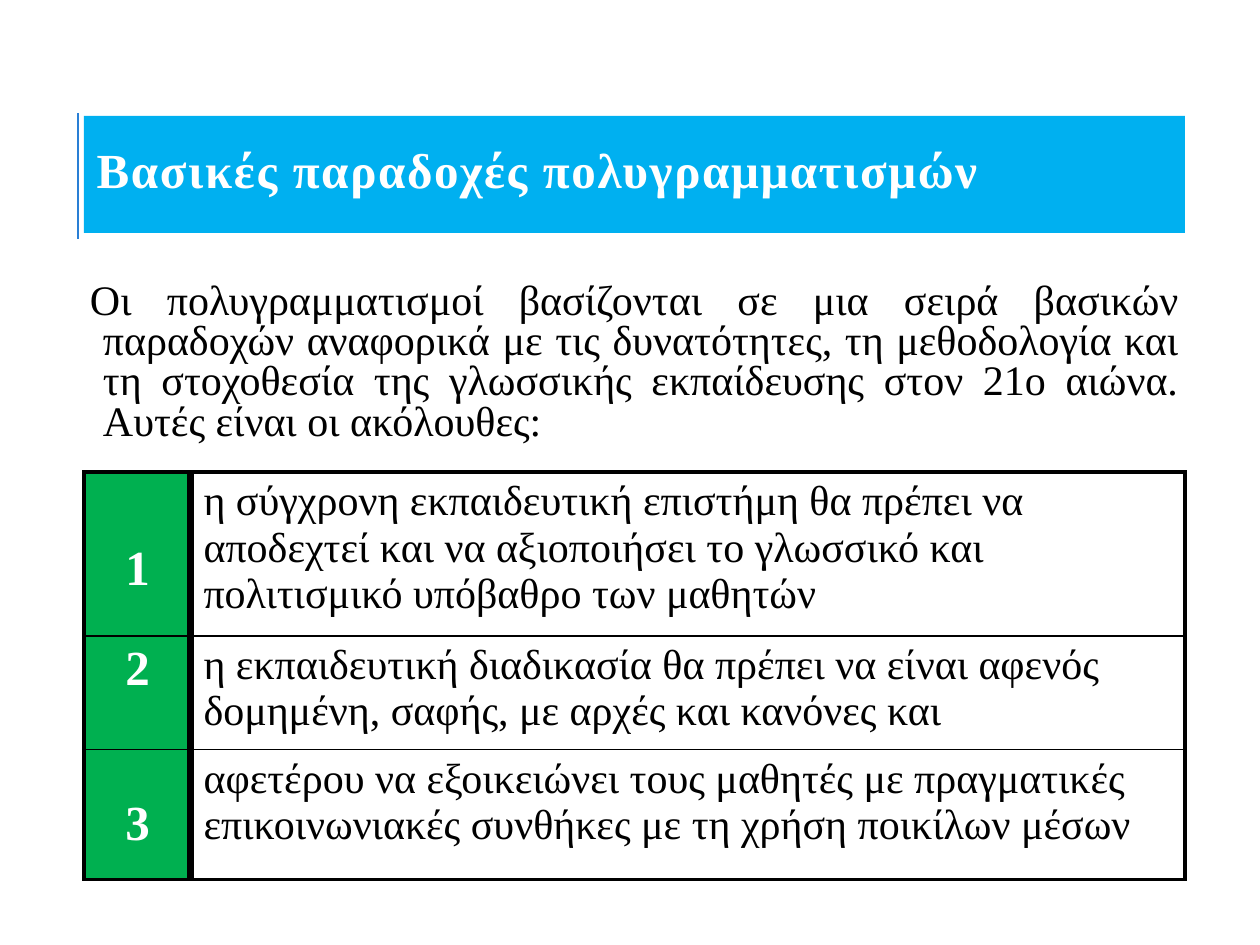
"""Builds a slide on the basic assumptions of multiliteracies."""
import dataclasses

import lxml.etree
import pptx
import pptx.dml.color
import pptx.enum.shapes
import pptx.enum.text
import pptx.oxml.ns
import pptx.util

PX = 914400 // 126
Pt = pptx.util.Pt
Align = pptx.enum.text.PP_ALIGN
Anchor = pptx.enum.text.MSO_ANCHOR
Rgb = pptx.dml.color.RGBColor.from_string
qn = pptx.oxml.ns.qn


@dataclasses.dataclass
class Theme:
    font: str = "Times New Roman"
    blue: str = "00B0F0"
    rule: str = "297FD5"
    green: str = "00B050"
    white: str = "FFFFFF"
    black: str = "000000"
    head: int = 28
    text: int = 24


theme = Theme()


def write(para, text, size, color, bold=False):
    run = para.add_run()
    run.text = text
    font = run.font
    font.name, font.size, font.bold = theme.font, Pt(size), bold
    font.color.rgb = Rgb(color)
    return run


def border(cell, side, width):
    props = cell._tc.get_or_add_tcPr()
    line = lxml.etree.SubElement(props, qn("a:ln" + side), w=str(Pt(width)))
    fill = lxml.etree.SubElement(line, qn("a:solidFill"))
    lxml.etree.SubElement(fill, qn("a:srgbClr"), val=theme.black)


deck = pptx.Presentation()
deck.slide_width, deck.slide_height = pptx.util.Inches(10), pptx.util.Inches(7.5)
slide = deck.slides.add_slide(deck.slide_layouts[5])
shapes = slide.shapes
left, wide = 84 * PX, 1101 * PX

rule = shapes.add_connector(
    pptx.enum.shapes.MSO_CONNECTOR.STRAIGHT, 78 * PX, 239 * PX, 78 * PX, 113 * PX)
rule.line.color.rgb = Rgb(theme.rule)
rule.line.width = Pt(1.5)
lxml.etree.SubElement(rule._element.spPr, qn("a:effectLst"))

title = shapes.title
title.left, title.top, title.width, title.height = left, 116 * PX, wide, 117 * PX
title.fill.solid()
title.fill.fore_color.rgb = Rgb(theme.blue)
frame = title.text_frame
frame.auto_size = pptx.enum.text.MSO_AUTO_SIZE.NONE
frame.vertical_anchor = Anchor.MIDDLE
para = frame.paragraphs[0]
para.alignment = Align.LEFT
para.line_spacing = 0.8
run = write(para, "Βασικές παραδοχές πολυγραμματισμών", theme.head, theme.white, True)
run._r.get_or_add_rPr().set("spc", "100")

intro = shapes.add_textbox(left, 277 * PX, wide, 189 * PX)
frame = intro.text_frame
frame.word_wrap = True
frame.margin_left = frame.margin_right = 6 * PX
frame.margin_top = frame.margin_bottom = 6 * PX
para = frame.paragraphs[0]
para.alignment = Align.JUSTIFY
para.line_spacing = 0.8
para.space_before, para.space_after = Pt(12), Pt(2)
props = para._p.get_or_add_pPr()
props.set("marL", str(13 * PX))
props.set("indent", str(-13 * PX))
write(para, "Οι πολυγραμματισμοί βασίζονται σε μια σειρά βασικών παραδοχών αναφορικά "
      "με τις δυνατότητες, τη μεθοδολογία και τη στοχοθεσία της γλωσσικής εκπαίδευσης "
      "στον 21ο αιώνα. Αυτές είναι οι ακόλουθες:", theme.text, theme.black)

rows = [
    (163, 70, "η σύγχρονη εκπαιδευτική επιστήμη θα πρέπει να αποδεχτεί και να "
     "αξιοποιήσει το γλωσσικό και πολιτισμικό υπόβαθρο των μαθητών"),
    (112, 6, "η εκπαιδευτική διαδικασία θα πρέπει να είναι αφενός δομημένη, σαφής, "
     "με αρχές και κανόνες και"),
    (130, 48, "αφετέρου να εξοικειώνει τους μαθητές με πραγματικές επικοινωνιακές "
     "συνθήκες με τη χρήση ποικίλων μέσων"),
]
high = sum(row[0] for row in rows) * PX
table = shapes.add_table(len(rows), 2, left, 472 * PX, wide, high).table
table.first_row = table.horz_banding = False
table.columns[0].width, table.columns[1].width = 107 * PX, 994 * PX
thin, edge, thick = 1, 2.25, 4.5
last = len(rows) - 1

for i, (tall, drop, text) in enumerate(rows):
    table.rows[i].height = tall * PX
    label, body = table.cell(i, 0), table.cell(i, 1)
    for cell, west, east in ((label, edge, thick), (body, thick, edge)):
        border(cell, "L", west)
        border(cell, "R", east)
        border(cell, "T", thin if i else edge)
        border(cell, "B", thin if i < last else edge)
        cell.vertical_anchor = Anchor.TOP
    label.margin_top = drop * PX
    label.fill.solid()
    label.fill.fore_color.rgb = Rgb(theme.green)
    body.fill.background()
    para = label.text_frame.paragraphs[0]
    para.alignment = Align.CENTER
    write(para, str(i + 1), theme.head, theme.white, True)
    write(body.text_frame.paragraphs[0], text, theme.text, theme.black)

deck.save("out.pptx")
